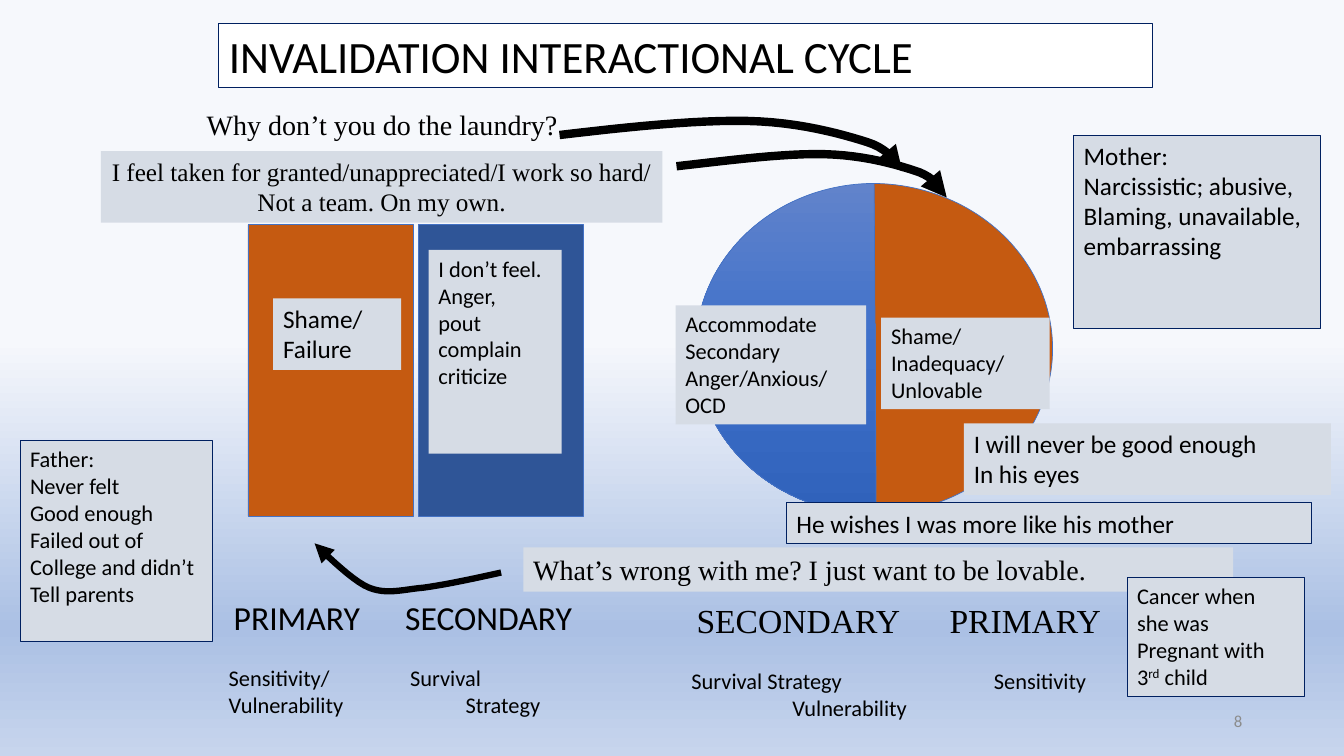
from lxml import etree
from pptx import Presentation
from pptx import util as u
from pptx.dml.color import RGBColor
from pptx.enum import shapes, text
from pptx.oxml.ns import qn

# Content: lengths in inches, text sizes in points
COLORS = {"ink": "000000", "paper": "FFFFFF", "note": "D6DCE5", "edge": "002060",
          "orange": "C55A11", "navy": "2F5597", "outline": "4472C4", "number": "8C8C8C"}
SANS, SERIF = "Calibri", "Times New Roman"
SKY = [(45, "F6F8FC"), (83, "ABC0E4"), (100, "C7D5ED")]
BLUES = [(0, "6183CB"), (50, "3E70CA"), (100, "3062BB")]
TITLE = "INVALIDATION INTERACTIONAL CYCLE"
TITLE_AT = (2.17, 0.23, 9.26, 0.64)

# Label columns: place, heading font, heading cells, lower rows; cells are (offset, words)
LABELS = [
    ((2.17, 5.87, 4.36, 1.31), SANS, [(0.05, "PRIMARY"), (1.75, "SECONDARY")],
     [[(0, "Sensitivity/"), (1.8, "Survival")], [(0, "Vulnerability"), (2.35, "Strategy")]]),
    ((6.76, 5.9, 4.82, 1.31), SERIF, [(0.05, "SECONDARY"), (2.56, "PRIMARY")],
     [[(0, "Survival Strategy"), (3, "Sensitivity")], [(1, "Vulnerability")]]),
]
# Partner halves: preset, place, fill, mirrored
HALVES = [
    ("RECTANGLE", (4.15, 2.23, 1.64, 2.89), "navy", False),
    ("RECTANGLE", (2.46, 2.23, 1.64, 2.89), "orange", False),
    ("CHORD", (6.86, 1.82, 3.58, 3.28), "orange", True),
    ("CHORD", (6.9, 1.82, 3.54, 3.28), BLUES, False),
]
CHORD_ENDS = (53.57, 162)
# Notes: place, size, font, has edge, lines
NOTES = [
    ((8.74, 3.15, 1.67, 0.91), 16, SANS, False, ["Shame/", "Inadequacy/", "Unlovable"]),
    ((5.19, 5.43, 7.04, 0.44), 20, SERIF, False,
     ["What’s wrong with me? I just want to be lovable."]),
    ((6.7, 3.03, 1.89, 1.18), 16, SANS, False,
     ["Accommodate", "Secondary Anger/Anxious/", "OCD"]),
    ((9.56, 4.2, 3.64, 0.71), 18, SANS, False,
     ["I will never be good enough", "In his eyes"]),
    ((2.71, 2.96, 1.27, 0.71), 18, SANS, False, ["Shame/", "Failure"]),
    ((1, 1.5, 5.57, 0.71), 18, SERIF, False,
     ["I feel taken for granted/unappreciated/I work so hard/", "Not a team. On my own."]),
    ((4.25, 2.48, 1.32, 2.02), 16, SANS, False,
     ["I don’t feel.", "Anger,", "pout", "complain", "criticize"]),
    ((0.2, 4.37, 1.91, 1.99), 16, SANS, True,
     ["Father:", "Never felt", "Good enough", "Failed out of", "College and didn’t",
      "Tell parents"]),
    ((10.65, 1.34, 2.45, 1.92), 18, SANS, True,
     ["Mother:", "Narcissistic; abusive,", "Blaming, unavailable,", "embarrassing"]),
    ((11.18, 5.73, 1.76, 1.18), 16, SANS, True,
     ["Cancer when", "she was", "Pregnant with", ("3", "rd", " child")]),
    ((7.8, 4.99, 5.21, 0.4), 18, SANS, True, ["He wishes I was more like his mother"]),
]
CENTERED = "I feel taken"
# Arrows: line width, then a start point and three control points per curve
ARROWS = [
    (6, [(5.55, 1.34), (6.22, 1.26), (6.9, 1.19), (7.41, 1.2), (7.92, 1.21), (8.35, 1.33),
         (8.6, 1.41), (8.86, 1.49), (8.95, 1.7), (8.95, 1.7)]),
    (4.5, [(4.97, 5.68), (4.7, 5.74), (4.42, 5.8), (4.2, 5.83), (3.98, 5.85), (3.84, 5.9),
           (3.66, 5.83), (3.48, 5.76), (3.12, 5.39), (3.12, 5.39)]),
    (6, [(6.71, 1.65), (7.24, 1.59), (7.78, 1.52), (8.18, 1.53), (8.58, 1.54), (8.92, 1.64),
         (9.12, 1.71), (9.32, 1.79), (9.39, 1.96), (9.39, 1.96)]),
]
STEPS = 12


def rgb(name):
    return RGBColor.from_string(COLORS[name])


def inches(values):
    return [u.Inches(value) for value in values]


def add_span(para, words, size, font, color="ink"):
    span = para.add_run()
    span.text = words
    span.font.size, span.font.name = u.Pt(size), font
    span.font.color.rgb = rgb(color)
    return span


def add_text(place):
    box = page.shapes.add_textbox(*inches(place))
    box.text_frame.word_wrap = True
    return box.text_frame


def add_row(para, cells, size, font):
    """Set each cell at its own tab stop."""
    tabs = etree.SubElement(para._p.get_or_add_pPr(), qn("a:tabLst"))
    for offset, words in cells:
        if offset:
            etree.SubElement(tabs, qn("a:tab"), pos=str(u.Inches(offset)), algn="l")
        add_span(para, "\t" + words if offset else words, size, font)


def set_gradient(fill, element, stops):
    fill.gradient()
    fill.gradient_angle = 270
    stop_list = next(element.iter(qn("a:gsLst")))
    for stop in list(stop_list):
        stop_list.remove(stop)
    for percent, color in stops:
        stop = etree.SubElement(stop_list, qn("a:gs"), pos=str(percent * 1000))
        etree.SubElement(stop, qn("a:srgbClr"), val=color)


def set_line(shape, color, width):
    shape.line.color.rgb = rgb(color)
    shape.line.width = u.Pt(width)


def curve_points(points):
    """Trace a chain of cubic curves as short steps."""
    traced = [points[0]]
    for first in range(0, len(points) - 1, 3):
        a, b, c, d = points[first:first + 4]
        for step in range(1, STEPS + 1):
            t = step / STEPS
            s = 1 - t
            traced.append(tuple(s**3 * a[i] + 3 * s * s * t * b[i] + 3 * s * t * t * c[i]
                                + t**3 * d[i] for i in (0, 1)))
    return traced


# Page and background
deck = Presentation()
deck.slide_width, deck.slide_height = u.Inches(13.33), u.Inches(7.5)
page = deck.slides.add_slide(deck.slide_layouts[5])
set_gradient(page.background.fill, page._element, SKY)

# Title
title = page.shapes.title
title.left, title.top, title.width, title.height = inches(TITLE_AT)
title.fill.solid()
title.fill.fore_color.rgb = rgb("paper")
set_line(title, "edge", 0.75)
frame = title.text_frame
frame.auto_size, frame.vertical_anchor = text.MSO_AUTO_SIZE.NONE, text.MSO_ANCHOR.TOP
frame.paragraphs[0].alignment = text.PP_ALIGN.LEFT
add_span(frame.paragraphs[0], TITLE, 32, SANS)

# Label columns
for place, font, heading, rows in LABELS:
    frame = add_text(place)
    add_row(frame.paragraphs[0], heading, 24, font)
    for index, cells in enumerate(rows):
        para = frame.add_paragraph()
        para.space_before = u.Pt(0 if index else 19.5)
        add_row(para, cells, 16, SANS)

# Opening question
frame = add_text((1.71, 0.97, 4.55, 0.91))
frame.margin_left, frame.margin_top = u.Inches(0.34), u.Inches(0.1)
add_span(frame.paragraphs[0], "Why don’t you do the laundry?", 20, SERIF)

# Partner halves
for preset, place, color, mirrored in HALVES:
    half = page.shapes.add_shape(shapes.MSO_SHAPE[preset], *inches(place))
    half.shadow.inherit = False
    if preset == "CHORD":
        half.adjustments[0], half.adjustments[1] = CHORD_ENDS
    if mirrored:
        half._element.spPr.find(qn("a:xfrm")).set("flipH", "1")
    if color is BLUES:
        set_gradient(half.fill, half._element, BLUES)
    else:
        half.fill.solid()
        half.fill.fore_color.rgb = rgb(color)
    set_line(half, "outline", 0.5)

# Notes
for place, size, font, edged, lines in NOTES:
    note = page.shapes.add_shape(shapes.MSO_SHAPE.RECTANGLE, *inches(place))
    note.shadow.inherit = False
    note.fill.solid()
    note.fill.fore_color.rgb = rgb("note")
    if edged:
        set_line(note, "edge", 0.75)
    else:
        note.line.fill.background()
    frame = note.text_frame
    frame.word_wrap, frame.vertical_anchor = True, text.MSO_ANCHOR.TOP
    centered = lines[0].startswith(CENTERED)
    for index, line in enumerate(lines):
        para = frame.add_paragraph() if index else frame.paragraphs[0]
        para.alignment = text.PP_ALIGN.CENTER if centered else text.PP_ALIGN.LEFT
        for words in [line] if isinstance(line, str) else line:
            span = add_span(para, words, size, font)
            if words == "rd":
                span.font._element.set("baseline", "30000")

# Arrows
for width, points in ARROWS:
    start, *rest = [tuple(inches(point)) for point in curve_points(points)]
    builder = page.shapes.build_freeform(*start)
    builder.add_line_segments(rest, close=False)
    arrow = builder.convert_to_shape()
    arrow.shadow.inherit = False
    arrow.fill.background()
    set_line(arrow, "ink", width)
    etree.SubElement(arrow.line._get_or_add_ln(), qn("a:tailEnd"), type="triangle")

# Page number
frame = add_text((9.42, 6.95, 3, 0.4))
frame.vertical_anchor = text.MSO_ANCHOR.MIDDLE
frame.paragraphs[0].alignment = text.PP_ALIGN.RIGHT
add_span(frame.paragraphs[0], "8", 12, SANS, "number")

deck.save("out.pptx")
